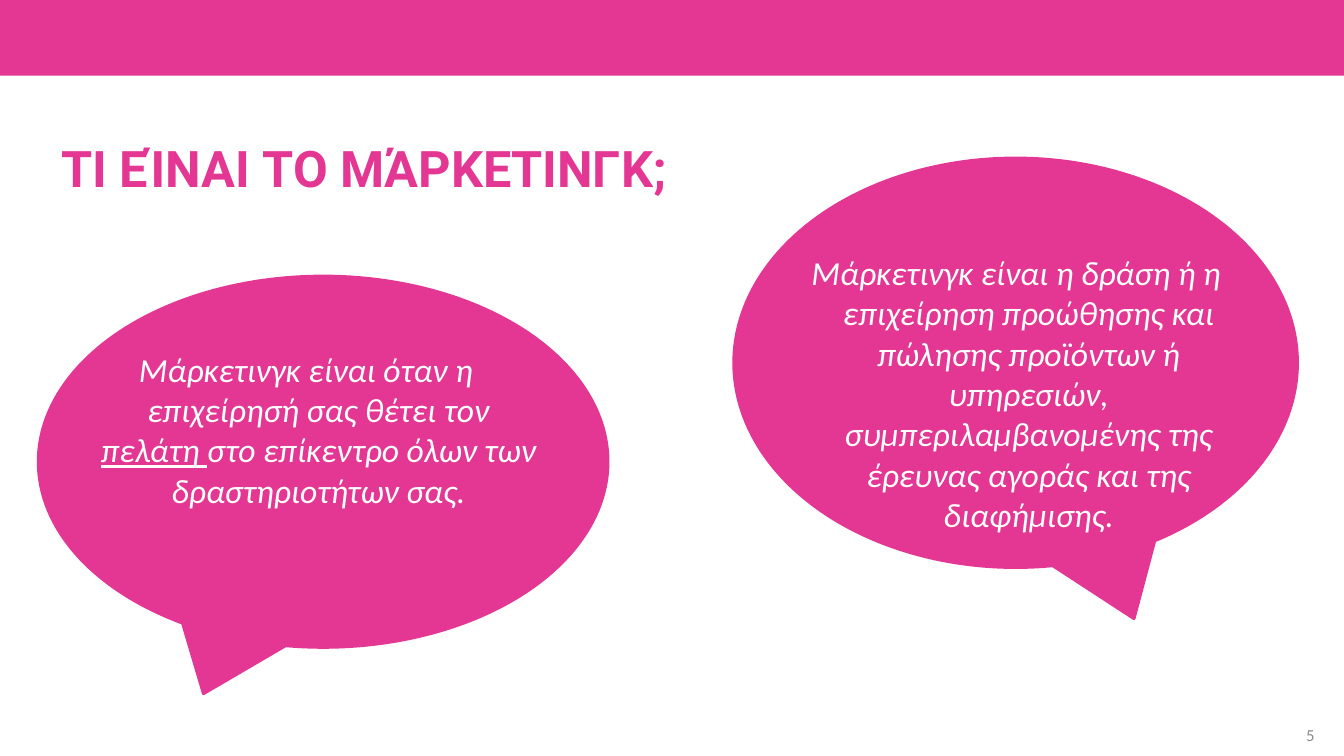
from dataclasses import dataclass

from pptx import Presentation
from pptx.dml.color import RGBColor
from pptx.enum.shapes import MSO_SHAPE as Shape
from pptx.enum.text import MSO_ANCHOR as Anchor, MSO_AUTO_SIZE as Fit, PP_ALIGN as Align
from pptx.util import Pt

PINK = "E43794"
WHITE = "FFFFFF"
GREY = "8C8C8C"

Box = tuple[float, float, float, float]


@dataclass
class Bubble:
    box: Box        # left, top, width, height in points
    tail: float     # sideways reach of the tail, as a share of the width
    text_box: Box
    words: list[tuple[str, bool]]  # wording, underlined


BUBBLES = [
    Bubble((27.4, 197.3, 406.8, 265), -0.21, (44.6, 245.5, 347.8, 189.4), [
        ("Μάρκετινγκ είναι όταν η επιχείρησή σας θέτει τον ", False),
        ("πελάτη ", True),
        ("στο επίκεντρο όλων των δραστηριοτήτων σας.", False),
    ]),
    Bubble((524.2, 113, 402.5, 292.3), 0.21, (542.8, 176.4, 366, 234), [
        ("Μάρκετινγκ είναι η δράση ή η επιχείρηση προώθησης και πώλησης "
         "προϊόντων ή υπηρεσιών, συμπεριλαμβανομένης της έρευνας αγοράς "
         "και της διαφήμισης.", False),
    ]),
]


def color(code: str) -> RGBColor:
    return RGBColor.from_string(code)


def style(font, name: str, size: float, code: str) -> None:
    font.name = name
    font.size = Pt(size)
    font.color.rgb = color(code)


def add_shape(slide, kind: Shape, box: Box):
    shape = slide.shapes.add_shape(kind, *map(Pt, box))
    shape.shadow.inherit = False
    shape.fill.solid()
    shape.fill.fore_color.rgb = color(PINK)
    shape.line.fill.background()
    return shape


def add_text(slide, box: Box):
    frame = slide.shapes.add_textbox(*map(Pt, box)).text_frame
    frame.word_wrap = True
    return frame


def add_title(slide, text: str) -> None:
    title = slide.shapes.title
    title.left, title.top, title.width, title.height = map(Pt, (36.7, 99.4, 886.3, 49.7))
    frame = title.text_frame
    frame.text = text
    frame.auto_size = Fit.NONE
    frame.vertical_anchor = Anchor.TOP
    para = frame.paragraphs[0]
    para.alignment = Align.LEFT
    para.line_spacing = 0.9
    font = para.runs[0].font
    style(font, "Roboto", 36, PINK)
    font.bold = True


def add_bubble(slide, bubble: Bubble) -> None:
    shape = add_shape(slide, Shape.OVAL_CALLOUT, bubble.box)
    shape.adjustments[0] = bubble.tail
    shape.adjustments[1] = 0.625
    shape.line.color.rgb = color(PINK)
    shape.line.width = Pt(2.25)

    para = add_text(slide, bubble.text_box).paragraphs[0]
    para.alignment = Align.CENTER
    # Hanging indent
    props = para._p.get_or_add_pPr()
    props.set("marL", str(Pt(18)))
    props.set("indent", str(Pt(-18)))
    for text, under in bubble.words:
        run = para.add_run()
        run.text = text
        style(run.font, "Calibri", 24, WHITE)
        run.font.italic = True
        run.font.underline = under


def add_number(slide, text: str) -> None:
    frame = add_text(slide, (607.7, 516.2, 338.4, 18))
    frame.text = text
    frame.vertical_anchor = Anchor.MIDDLE
    para = frame.paragraphs[0]
    para.alignment = Align.RIGHT
    style(para.runs[0].font, "Calibri", 12, GREY)


def main() -> None:
    deck = Presentation()
    deck.slide_width, deck.slide_height = Pt(960), Pt(540)
    slide = deck.slides.add_slide(deck.slide_layouts[5])

    # Top band, page number and title
    add_shape(slide, Shape.RECTANGLE, (0, 0, 960, 54))
    add_number(slide, "5")
    add_title(slide, "ΤΙ ΕΊΝΑΙ ΤΟ ΜΆΡΚΕΤΙΝΓΚ;")

    # Speech bubbles
    for bubble in BUBBLES:
        add_bubble(slide, bubble)

    deck.save("out.pptx")


if __name__ == "__main__":
    main()
